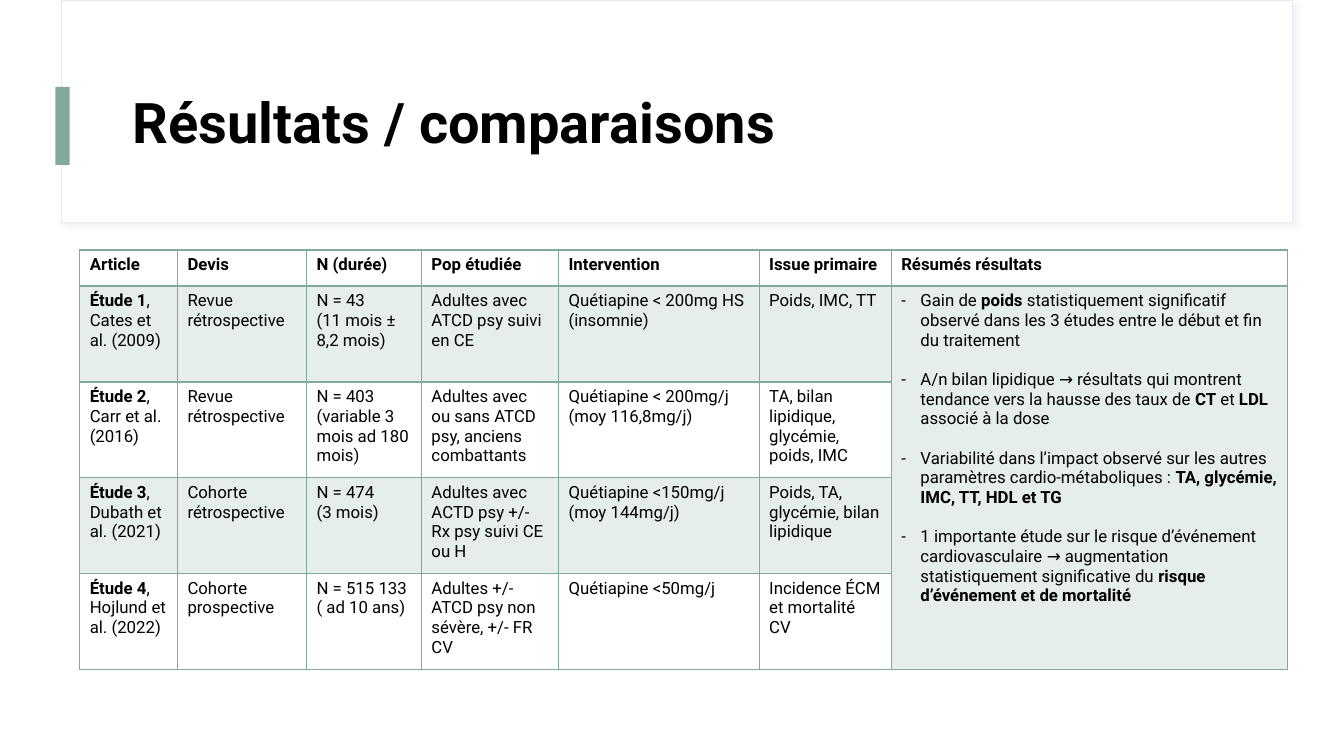
from lxml.etree import SubElement
from pptx import Presentation
from pptx.dml.color import RGBColor
from pptx.enum.shapes import MSO_SHAPE
from pptx.enum.text import MSO_ANCHOR
from pptx.oxml.ns import qn
from pptx.util import Inches, Pt

GREEN = RGBColor(0x81, 0xAA, 0x9C)
WHITE = RGBColor(0xFF, 0xFF, 0xFF)
BLACK = RGBColor(0, 0, 0)
PALE = RGBColor(0xE5, 0xEA, 0xF0)
GREY = RGBColor(0xD9, 0xD9, 0xD9)
FONT = "Roboto"

COLS = [0.97, 1.28, 1.14, 1.36, 1.99, 1.31, 3.93]
ROWS = [0.36] + [0.95] * 4
HEADS = ["Article", "Devis", "N (durée)", "Pop étudiée", "Intervention",
         "Issue primaire", "Résumés résultats"]
STUDIES = [
    ["**Étude 1**, Cates et al. (2009)", "Revue rétrospective",
     "N = 43\n(11 mois ± 8,2 mois)", "Adultes avec ATCD psy suivi en CE",
     "Quétiapine < 200mg HS (insomnie)", "Poids, IMC, TT"],
    ["**Étude 2**, Carr et al. (2016)", "Revue rétrospective",
     "N = 403\n(variable 3 mois ad 180 mois)",
     "Adultes avec ou sans ATCD psy, anciens combattants",
     "Quétiapine < 200mg/j (moy 116,8mg/j)",
     "TA, bilan lipidique, glycémie, poids, IMC"],
    ["**Étude 3**, Dubath et al. (2021)", "Cohorte rétrospective",
     "N = 474\n(3 mois)", "Adultes avec ACTD psy +/- Rx psy suivi CE ou H",
     "Quétiapine <150mg/j (moy 144mg/j)",
     "Poids, TA, glycémie, bilan lipidique"],
    ["**Étude 4**, Hojlund et al. (2022)", "Cohorte prospective",
     "N = 515 133\n( ad 10 ans)",
     "Adultes +/- ATCD psy non sévère, +/- FR CV",
     "Quétiapine <50mg/j", "Incidence ÉCM et mortalité CV"],
]
SUMMARY = "\n".join([
    "Gain de **poids** statistiquement significatif observé dans les 3 études "
    "entre le début et fin du traitement",
    "A/n bilan lipidique → résultats qui montrent tendance vers la hausse des "
    "taux de **CT** et **LDL **associé à la dose",
    "Variabilité dans l’impact observé sur les autres paramètres "
    "cardio-métaboliques : **TA, glycémie, IMC, TT, HDL et TG**",
    "1 importante étude sur le risque d’événement cardiovasculaire → "
    "augmentation statistiquement significative du "
    "**risque d’événement et de mortalité**",
])


def add_text(frame, text, size):
    for i, line in enumerate(text.split("\n")):
        para = frame.paragraphs[0] if i == 0 else frame.add_paragraph()
        for j, part in enumerate(line.split("**")):
            if part:
                run = para.add_run()
                run.text = part
                font = run.font
                font.name, font.size, font.bold = FONT, Pt(size), j % 2 == 1
                font.color.rgb = BLACK


def add_dash(frame):
    for i, para in enumerate(frame.paragraphs):
        para.space_before = Pt(14 if i else 0)
        props = para._p.get_or_add_pPr()
        props.set("marL", str(Inches(0.19)))
        props.set("indent", str(-Inches(0.19)))
        SubElement(props, qn("a:buFont"), typeface=FONT)
        SubElement(props, qn("a:buChar"), char="-")


def add_rect(slide, box, fill, line=None):
    rect = slide.shapes.add_shape(MSO_SHAPE.RECTANGLE, *map(Inches, box))
    rect.shadow.inherit = False
    rect.fill.solid()
    rect.fill.fore_color.rgb = fill
    if line:
        rect.line.color.rgb = line
        rect.line.width = Pt(0.75)
    else:
        rect.line.fill.background()
    return rect


def add_shade(rect):
    effects = rect._element.spPr.find(qn("a:effectLst"))
    shade = SubElement(effects, qn("a:outerShdw"), blurRad=str(Pt(4)),
                       dist=str(Pt(3)), dir="2700000", algn="tl")
    color = SubElement(shade, qn("a:srgbClr"), val=str(GREY))
    SubElement(color, qn("a:alpha"), val="30000")


def add_header(slide, box):
    left, top, width, height = box
    add_shade(add_rect(slide, box, WHITE, PALE))
    add_rect(slide, (left - 0.06, top + 0.39 * height, 0.14, 0.35 * height), GREEN)
    spot = (left + 0.05 * width, top + 0.27 * height, 0.91 * width, 0.585 * height)
    frame = slide.shapes.add_textbox(*map(Inches, spot)).text_frame
    frame.word_wrap = True
    frame.vertical_anchor = MSO_ANCHOR.MIDDLE
    add_text(frame, "**Résultats / comparaisons**", 40)
    frame.paragraphs[0].line_spacing = 0.9


def add_edges(cell, widths):
    props = cell._tc.get_or_add_tcPr()
    for side, width in widths.items():
        edge = SubElement(props, qn("a:ln" + side), w=str(Pt(width)))
        fill = SubElement(edge, qn("a:solidFill"))
        SubElement(fill, qn("a:srgbClr"), val=str(GREEN))


def tint(cell):
    cell.fill.solid()
    cell.fill.fore_color.rgb = GREEN
    color = cell._tc.tcPr.find(qn("a:solidFill")).find(qn("a:srgbClr"))
    SubElement(color, qn("a:alpha"), val="20000")


def add_grid(slide, left, top):
    table = slide.shapes.add_table(
        len(ROWS), len(COLS), Inches(left), Inches(top),
        Inches(sum(COLS)), Inches(sum(ROWS))).table
    table.first_row = table.horz_banding = False
    for col, width in zip(table.columns, COLS):
        col.width = Inches(width)
    for row, height in zip(table.rows, ROWS):
        row.height = Inches(height)
    last = len(COLS) - 1
    table.cell(1, last).merge(table.cell(len(ROWS) - 1, last))
    texts = [[f"**{head}**" for head in HEADS]] + STUDIES
    texts[1] = texts[1] + [SUMMARY]
    for r in range(len(ROWS)):
        for c in range(len(COLS)):
            cell = table.cell(r, c)
            widths = {"L": 1, "R": 1, "T": 2 if r == 1 else 1,
                      "B": 2 if r == 0 else 1}
            if cell.is_spanned:
                widths.pop("T")
                if r < len(ROWS) - 1:
                    widths.pop("B")
            add_edges(cell, widths)
            if r % 2 or cell.is_spanned:
                tint(cell)
            else:
                cell.fill.background()
            if c < len(texts[r]):
                add_text(cell.text_frame, texts[r][c], 12)
    add_dash(table.cell(1, last).text_frame)


def main():
    deck = Presentation()
    deck.slide_width, deck.slide_height = Inches(13.33), Inches(7.5)
    slide = deck.slides.add_slide(deck.slide_layouts[6])
    add_header(slide, (0.61, 0, 12.21, 2.21))
    add_grid(slide, 0.79, 2.48)
    deck.save("out.pptx")


if __name__ == "__main__":
    main()
